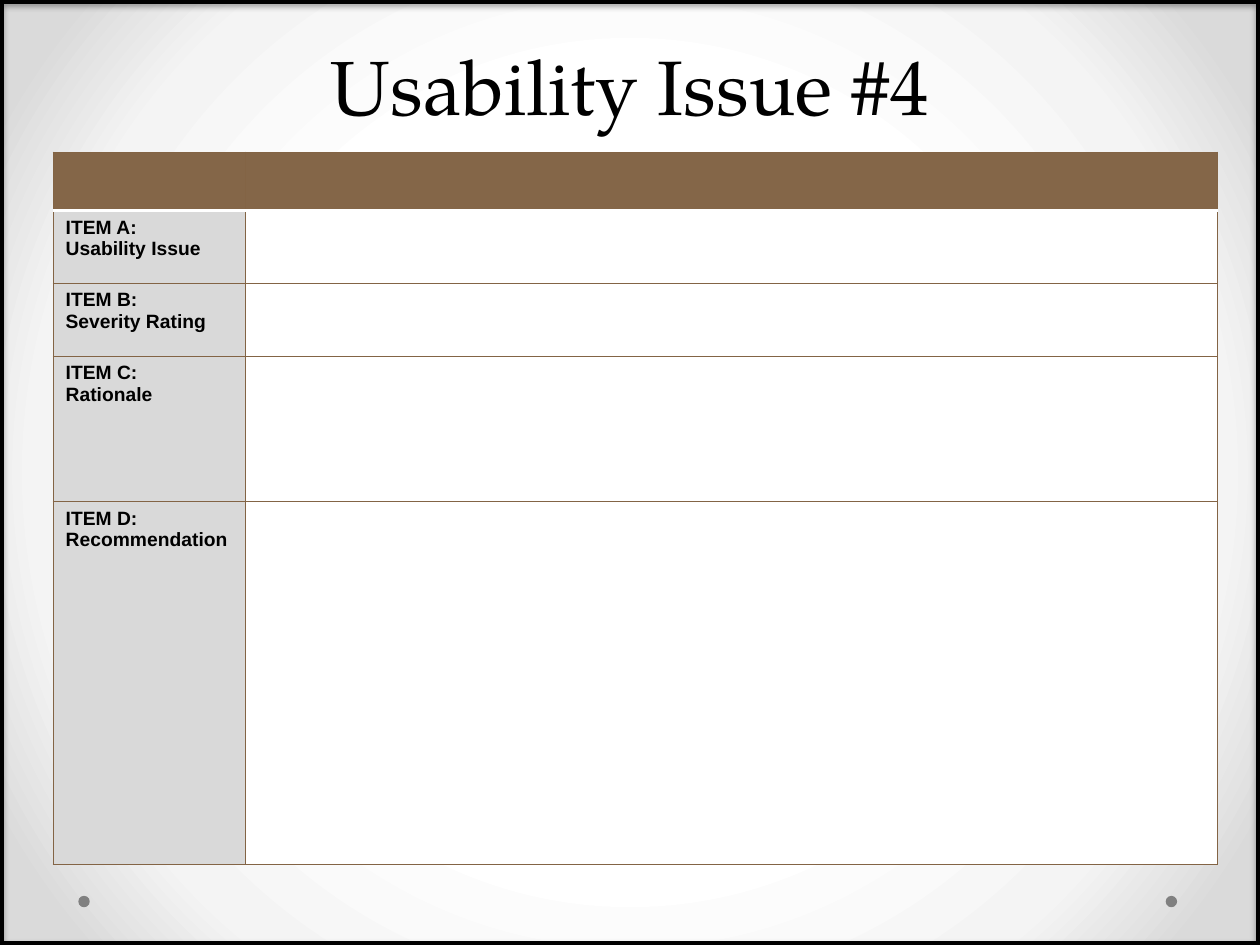
from lxml.etree import SubElement
from pptx import Presentation
from pptx.dml.color import RGBColor
from pptx.enum.shapes import MSO_SHAPE
from pptx.enum.text import MSO_ANCHOR, PP_ALIGN
from pptx.oxml import parse_xml
from pptx.oxml.ns import nsdecls, qn
from pptx.util import Cm, Pt

BLACK = RGBColor(0x00, 0x00, 0x00)
WHITE = RGBColor(0xFF, 0xFF, 0xFF)
GREY = RGBColor(0x80, 0x80, 0x80)
LABEL_GREY = RGBColor(0xD9, 0xD9, 0xD9)
HEADER_BROWN = RGBColor(0x84, 0x66, 0x48)
BORDER_BROWN = RGBColor(0x83, 0x64, 0x45)
GRADIENT = [(50, WHITE), (76, RGBColor(0xF4, 0xF4, 0xF4)),
            (92, RGBColor(0xDA, 0xDA, 0xDA))]


def add_border(cell, side, color, width):
    line = SubElement(cell._tc.get_or_add_tcPr(), qn(f"a:ln{side}"), w=str(Pt(width)))
    fill = SubElement(line, qn("a:solidFill"))
    SubElement(fill, qn("a:srgbClr"), val=str(color))


prs = Presentation()
prs.slide_width, prs.slide_height = Cm(25.4), Cm(19.05)
slide = prs.slides.add_slide(prs.slide_layouts[6])

# Radial background
stops = "".join(f'<a:gs pos="{pos * 1000}"><a:srgbClr val="{color}"/></a:gs>'
                for pos, color in GRADIENT)
slide.element.cSld.insert(0, parse_xml(
    f'<p:bg {nsdecls("p", "a")}><p:bgPr><a:gradFill rotWithShape="1">'
    f'<a:gsLst>{stops}</a:gsLst><a:path path="circle">'
    '<a:fillToRect l="50000" t="50000" r="50000" b="50000"/></a:path>'
    '</a:gradFill><a:effectLst/></p:bgPr></p:bg>'))

# Footer dots
for left in (23.5, 1.58):
    dot = slide.shapes.add_shape(MSO_SHAPE.OVAL, Cm(left), Cm(18.06), Cm(0.23), Cm(0.23))
    dot.shadow.inherit = False
    dot.fill.solid()
    dot.fill.fore_color.rgb = GREY
    dot.line.fill.background()

# Issue table
items = ["Usability Issue", "Severity Rating", "Rationale", "Recommendation"]
labels = [""] + [f"ITEM {letter}: \v{item}" for letter, item in zip("ABCD", items)]
widths = [3.88, 19.59]
heights = [1.17, 1.47, 1.47, 2.93, 7.32]
issue = slide.shapes.add_table(len(heights), len(widths), Cm(1.07), Cm(3.07),
                               Cm(sum(widths)), Cm(sum(heights))).table
issue.horz_banding = False
for column, width in zip(issue.columns, widths):
    column.width = Cm(width)
for r, (height, label) in enumerate(zip(heights, labels)):
    issue.rows[r].height = Cm(height)
    for c, cell in enumerate(issue.rows[r].cells):
        for side in "LRTB":
            under_header = (r, side) in ((0, "B"), (1, "T"))
            add_border(cell, side, WHITE if under_header else BORDER_BROWN,
                       2.25 if under_header else 0.75)
        cell.fill.solid()
        cell.fill.fore_color.rgb = HEADER_BROWN if r == 0 else (LABEL_GREY, WHITE)[c]
    if label:
        label_cell = issue.cell(r, 0)
        label_cell.text = label
        font = label_cell.text_frame.paragraphs[0].font
        font.name, font.size, font.bold = "Arial", Pt(11), True
        font.color.rgb = BLACK

# Title
title = slide.shapes.add_textbox(0, 0, prs.slide_width, Cm(2.77)).text_frame
title.word_wrap = True
title.vertical_anchor = MSO_ANCHOR.BOTTOM
heading = title.paragraphs[0]
heading.text = "Usability Issue #4"
heading.alignment = PP_ALIGN.CENTER
heading.line_spacing = Pt(58)
heading.font.name, heading.font.size = "TeX Gyre Pagella", Pt(44)
heading.font.color.rgb = BLACK

# Slide frame with soft shadow
frame = slide.shapes.add_shape(MSO_SHAPE.RECTANGLE, 0, 0, prs.slide_width, prs.slide_height)
frame.fill.background()
frame.line.color.rgb = BLACK
frame.line.width = Pt(4.5)
frame.shadow.inherit = False
effects = frame._element.spPr.find(qn("a:effectLst"))
shadow = SubElement(effects, qn("a:outerShdw"), blurRad=str(Pt(3.1)), dist=str(Pt(1.8)),
                    dir="5400000", rotWithShape="0")
shade = SubElement(shadow, qn("a:srgbClr"), val=str(BLACK))
SubElement(shade, qn("a:alpha"), val="35000")

prs.save("out.pptx")
